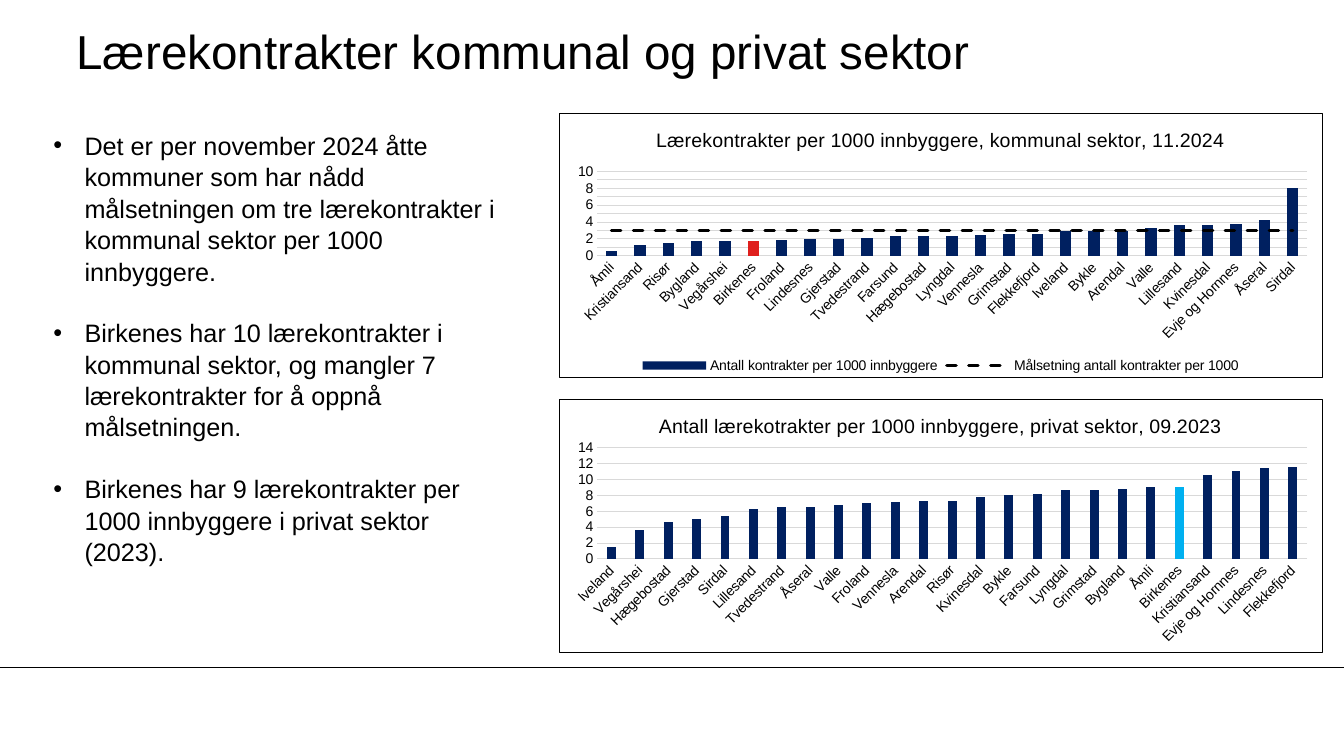
from lxml import etree
from pptx import Presentation
from pptx.chart.data import CategoryChartData
from pptx.dml.color import RGBColor
from pptx.enum.chart import XL_CHART_TYPE as ChartType, XL_LEGEND_POSITION as LegendPosition
from pptx.enum.chart import XL_MARKER_STYLE as MarkerStyle, XL_TICK_MARK as TickMark
from pptx.enum.dml import MSO_LINE as LineStyle
from pptx.enum.shapes import MSO_CONNECTOR as Connector
from pptx.enum.text import MSO_ANCHOR as Anchor
from pptx.oxml import parse_xml
from pptx.oxml.ns import nsdecls, qn
from pptx.util import Inches, Pt

BLACK = RGBColor(0x00, 0x00, 0x00)
WHITE = RGBColor(0xFF, 0xFF, 0xFF)
GRID_GREY = RGBColor(0xD9, 0xD9, 0xD9)
NAVY = RGBColor(0x00, 0x20, 0x60)
RED = RGBColor(0xDF, 0x1F, 0x1D)
SKY_BLUE = RGBColor(0x00, 0xB0, 0xF0)

HIGHLIGHT = "Birkenes"
TARGET = 3

BULLETS = [
    "Det er per november 2024 åtte kommuner som har nådd målsetningen om tre "
    "lærekontrakter i kommunal sektor per 1000 innbyggere.",
    "Birkenes har 10 lærekontrakter i kommunal sektor, og mangler 7 "
    "lærekontrakter for å oppnå målsetningen.",
    "Birkenes har 9 lærekontrakter per 1000 innbyggere i privat sektor (2023).",
]

MUNICIPAL = {
    "Åmli": 0.6, "Kristiansand": 1.3, "Risør": 1.5, "Bygland": 1.8, "Vegårshei": 1.8,
    "Birkenes": 1.8, "Froland": 1.9, "Lindesnes": 2, "Gjerstad": 2, "Tvedestrand": 2.1,
    "Farsund": 2.3, "Hægebostad": 2.3, "Lyngdal": 2.3, "Vennesla": 2.5, "Grimstad": 2.6,
    "Flekkefjord": 2.6, "Iveland": 2.9, "Bykle": 3, "Arendal": 3, "Valle": 3.3,
    "Lillesand": 3.6, "Kvinesdal": 3.7, "Evje og Hornnes": 3.8, "Åseral": 4.3, "Sirdal": 8,
}
PRIVATE = {
    "Iveland": 1.5, "Vegårshei": 3.7, "Hægebostad": 4.6, "Gjerstad": 5, "Sirdal": 5.4,
    "Lillesand": 6.3, "Tvedestrand": 6.5, "Åseral": 6.6, "Valle": 6.8, "Froland": 7,
    "Vennesla": 7.2, "Arendal": 7.3, "Risør": 7.3, "Kvinesdal": 7.8, "Bykle": 8,
    "Farsund": 8.2, "Lyngdal": 8.7, "Grimstad": 8.7, "Bygland": 8.8, "Åmli": 9,
    "Birkenes": 9.1, "Kristiansand": 10.6, "Evje og Hornnes": 11, "Lindesnes": 11.4,
    "Flekkefjord": 11.6,
}


class SlideBuilder:
    font_name = "Arial"
    text_color = BLACK
    line_width = Pt(0.75)

    def __init__(self, slide):
        self.slide = slide

    def style_font(self, font, size):
        font.name = self.font_name
        font.size = Pt(size)
        font.bold = False
        font.color.rgb = self.text_color

    def style_line(self, line, color):
        line.color.rgb = color
        line.width = self.line_width

    def rule(self, y, width):
        connector = self.slide.shapes.add_connector(
            Connector.STRAIGHT, 0, Inches(y), Inches(width), Inches(y))
        self.style_line(connector.line, BLACK)
        etree.SubElement(connector._element.spPr, qn("a:effectLst"))

    def text_box(self, box):
        frame = self.slide.shapes.add_textbox(*map(Inches, box)).text_frame
        frame.word_wrap = True
        return frame

    def title(self, text, box):
        frame = self.text_box(box)
        frame.vertical_anchor = Anchor.MIDDLE
        frame.margin_left = frame.margin_right = frame.margin_top = frame.margin_bottom = 0
        run = frame.paragraphs[0].add_run()
        run.text = text
        self.style_font(run.font, 34)

    def bullets(self, texts, box):
        frame = self.text_box(box)
        for index, text in enumerate(texts):
            paragraph = frame.add_paragraph() if index else frame.paragraphs[0]
            properties = paragraph._p.get_or_add_pPr()
            properties.set("marL", str(Inches(0.31)))
            properties.set("indent", str(-Inches(0.31)))
            etree.SubElement(properties, qn("a:buFont")).set("typeface", self.font_name)
            etree.SubElement(properties, qn("a:buChar")).set("char", "•")
            paragraph.line_spacing = 1.04
            if index:
                paragraph.space_before = Pt(21.6)
            run = paragraph.add_run()
            run.text = text
            self.style_font(run.font, 18)

    def column_chart(self, title, values, box, plot_box, highlight_color, gap, overlap,
                     maximum, unit, series_name="Series 1", target_name=None):
        data = CategoryChartData()
        data.categories = list(values)
        data.add_series(series_name, list(values.values()))
        if target_name:
            data.add_series(target_name, [TARGET] * len(values))
        chart = self.slide.shapes.add_chart(
            ChartType.COLUMN_CLUSTERED, *map(Inches, box), data).chart
        self.style_font(chart.font, 10)
        self.frame_chart(chart)
        self.place_plot(chart, plot_box)

        # Heading
        chart.has_title = True
        chart.chart_title.include_in_layout = False
        run = chart.chart_title.text_frame.paragraphs[0].add_run()
        run.text = title
        self.style_font(run.font, 14)

        # Columns
        plot = chart.plots[0]
        plot.vary_by_categories = False
        plot.gap_width = gap
        plot.overlap = overlap
        columns = plot.series[0]
        columns.format.fill.solid()
        columns.format.fill.fore_color.rgb = NAVY
        fill = columns.points[list(values).index(HIGHLIGHT)].format.fill
        fill.solid()
        fill.fore_color.rgb = highlight_color

        self.style_axes(chart, maximum, unit)
        chart.has_legend = bool(target_name)
        if target_name:
            self.target_line(chart)
            chart.legend.position = LegendPosition.BOTTOM
            chart.legend.include_in_layout = False
            self.style_font(chart.legend.font, 10)

    def style_axes(self, chart, maximum, unit):
        category_axis, value_axis = chart.category_axis, chart.value_axis
        for axis in (category_axis, value_axis):
            axis.major_tick_mark = axis.minor_tick_mark = TickMark.NONE
            self.style_font(axis.tick_labels.font, 10)
        self.style_line(category_axis.format.line, GRID_GREY)
        category_axis._element.find(qn("c:txPr")).find(qn("a:bodyPr")).set("rot", "-2700000")
        value_axis.format.line.fill.background()
        value_axis.minimum_scale = 0
        value_axis.maximum_scale = maximum
        value_axis.major_unit = unit
        value_axis.tick_labels.number_format = "0"
        value_axis.tick_labels.number_format_is_linked = False
        self.style_line(value_axis.major_gridlines.format.line, GRID_GREY)

    def frame_chart(self, chart):
        properties = parse_xml(
            f'<c:spPr {nsdecls("c", "a")}><a:solidFill><a:srgbClr val="{WHITE}"/></a:solidFill>'
            f'<a:ln w="{self.line_width}"><a:solidFill><a:srgbClr val="{BLACK}"/>'
            '</a:solidFill></a:ln></c:spPr>')
        chart._chartSpace.find(qn("c:txPr")).addprevious(properties)

    def place_plot(self, chart, plot_box):
        area = chart._chartSpace.find(".//" + qn("c:plotArea"))
        for layout in area.findall(qn("c:layout")):
            area.remove(layout)
        sizes = "".join(f'<c:{key} val="{value}"/>' for key, value in zip("xywh", plot_box))
        area.insert(0, parse_xml(
            f'<c:layout {nsdecls("c")}><c:manualLayout><c:layoutTarget val="inner"/>'
            f'<c:xMode val="edge"/><c:yMode val="edge"/>{sizes}</c:manualLayout></c:layout>'))

    def target_line(self, chart):
        # Move the second series into a line plot on the same axes
        bars = chart._chartSpace.find(".//" + qn("c:barChart"))
        series = bars.findall(qn("c:ser"))[1]
        for flag in series.findall(qn("c:invertIfNegative")):
            series.remove(flag)
        axes = "".join(f'<c:axId val="{axis.get("val")}"/>' for axis in bars.findall(qn("c:axId")))
        lines = parse_xml(
            f'<c:lineChart {nsdecls("c")}><c:grouping val="standard"/><c:varyColors val="0"/>'
            f'<c:marker val="1"/>{axes}</c:lineChart>')
        lines.insert(2, series)
        bars.addnext(lines)
        target = chart.plots[1].series[0]
        target.smooth = False
        target.marker.style = MarkerStyle.NONE
        line = target.format.line
        line.color.rgb = BLACK
        line.width = Pt(2.25)
        line.dash_style = LineStyle.DASH
        series.find(qn("c:spPr")).find(qn("a:ln")).set("cap", "rnd")


def main():
    presentation = Presentation()
    presentation.slide_width, presentation.slide_height = Inches(13.33), Inches(7.5)
    builder = SlideBuilder(presentation.slides.add_slide(presentation.slide_layouts[6]))

    # Footer rule and text
    builder.rule(6.62, 13.33)
    builder.title("Lærekontrakter kommunal og privat sektor", (0.76, 0.13, 11.1, 0.75))
    builder.bullets(BULLETS, (0.43, 1.23, 4.75, 4.64))

    # Charts
    builder.column_chart(
        "Antall lærekotrakter per 1000 innbyggere, privat sektor, 09.2023", PRIVATE,
        (5.54, 3.96, 7.58, 2.52), (0.05, 0.19, 0.93, 0.44), SKY_BLUE,
        gap=219, overlap=-27, maximum=14, unit=2)
    builder.column_chart(
        "Lærekontrakter per 1000 innbyggere, kommunal sektor, 11.2024", MUNICIPAL,
        (5.54, 1.12, 7.58, 2.63), (0.05, 0.22, 0.93, 0.32), RED,
        gap=150, overlap=0, maximum=10, unit=1,
        series_name="Antall kontrakter per 1000 innbyggere",
        target_name="Målsetning antall kontrakter per 1000")

    presentation.save("out.pptx")


if __name__ == "__main__":
    main()
